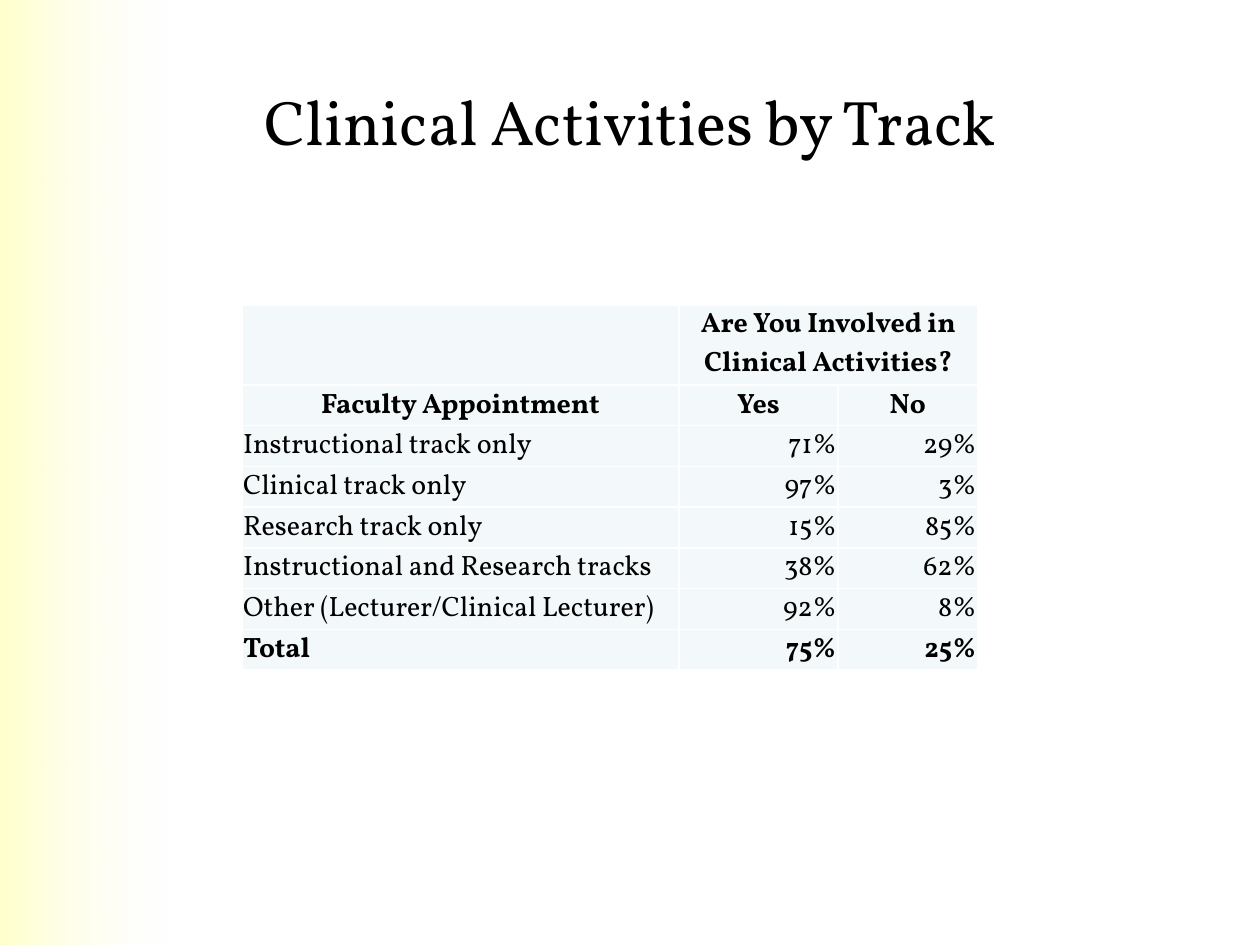
from lxml import etree
from pptx import Presentation
from pptx.dml.color import RGBColor
from pptx.enum.shapes import MSO_SHAPE
from pptx.enum.text import MSO_ANCHOR, PP_ALIGN
from pptx.oxml.ns import qn
from pptx.util import Pt

LEFT, CENTER, RIGHT = PP_ALIGN.LEFT, PP_ALIGN.CENTER, PP_ALIGN.RIGHT
TOP, MIDDLE, BOTTOM = MSO_ANCHOR.TOP, MSO_ANCHOR.MIDDLE, MSO_ANCHOR.BOTTOM
RECTANGLE = MSO_SHAPE.RECTANGLE

# Content
TITLE = "Clinical Activities by Track"
ROWS = [
    ("", "Are You Involved in Clinical Activities?", ""),
    ("Faculty Appointment", "Yes", "No"),
    ("Instructional track only", "71%", "29%"),
    ("Clinical track only", "97%", "3%"),
    ("Research track only", "15%", "85%"),
    ("Instructional and Research tracks", "38%", "62%"),
    ("Other (Lecturer/Clinical Lecturer)", "92%", "8%"),
    ("Total", "75%", "25%"),
]
HEADER_ROWS = 2
TOTAL_ROW = len(ROWS) - 1

# Layout and style, in points
FONT = "Vollkorn"
BLACK, WHITE, CELL_FILL = "000000", "FFFFFF", "F3F9FA"
BAND_START, BAND_END = "FFFFCC", "FFFFF4"
TABLE_LEFT, TABLE_TOP = 138.24, 174.24
COLUMN_WIDTHS = [249.84, 90.72, 79.92]
ROW_HEIGHTS = [45.72] + [23.28] * (len(ROWS) - 1)


def color(hex_value):
    return RGBColor.from_string(hex_value)


def style_paragraph(paragraph, size, alignment, bold=False):
    paragraph.alignment = alignment
    font = paragraph.font
    font.name, font.size, font.bold = FONT, Pt(size), bold
    font.color.rgb = color(BLACK)


def add_borders(cell, hex_value, width):
    properties = cell._tc.get_or_add_tcPr()
    for side in ("a:lnL", "a:lnR", "a:lnT", "a:lnB"):
        line = etree.SubElement(properties, qn(side), w=str(Pt(width)))
        fill = etree.SubElement(line, qn("a:solidFill"))
        etree.SubElement(fill, qn("a:srgbClr"), val=hex_value)


def add_side_band(slide):
    band = slide.shapes.add_shape(RECTANGLE, 0, 0, Pt(96), Pt(540))
    band.shadow.inherit = False
    band.line.fill.background()
    band.fill.gradient()
    band.fill.gradient_angle = 0
    first, last = band.fill.gradient_stops
    first.position, last.position = 0, 1
    first.color.rgb, last.color.rgb = color(BAND_START), color(BAND_END)
    # The last stop is fully transparent
    end_color = band.element.findall(".//" + qn("a:srgbClr"))[-1]
    etree.SubElement(end_color, qn("a:alpha"), val="0")
    slide.shapes.title.element.addprevious(band.element)


def add_title(slide):
    title = slide.shapes.title
    title.left, title.top, title.width, title.height = Pt(36), Pt(24), Pt(648), Pt(90)
    title.text = TITLE
    title.text_frame.vertical_anchor = MIDDLE
    style_paragraph(title.text_frame.paragraphs[0], 36, CENTER)


def add_track_table(slide):
    table = slide.shapes.add_table(
        len(ROWS), len(COLUMN_WIDTHS), Pt(TABLE_LEFT), Pt(TABLE_TOP),
        Pt(sum(COLUMN_WIDTHS)), Pt(sum(ROW_HEIGHTS))).table
    table.first_row = table.horz_banding = False
    for column, width in zip(table.columns, COLUMN_WIDTHS):
        column.width = Pt(width)
    for row, height in zip(table.rows, ROW_HEIGHTS):
        row.height = Pt(height)

    for row_index, values in enumerate(ROWS):
        is_header = row_index < HEADER_ROWS
        for column_index, value in enumerate(values):
            cell = table.cell(row_index, column_index)
            add_borders(cell, WHITE, 1)
            cell.fill.solid()
            cell.fill.fore_color.rgb = color(CELL_FILL)
            cell.margin_left = cell.margin_right = cell.margin_top = Pt(0.72)
            cell.margin_bottom = 0
            cell.vertical_anchor = BOTTOM if row_index == 1 else TOP
            cell.text = value
            alignment = CENTER if is_header else RIGHT if column_index else LEFT
            style_paragraph(cell.text_frame.paragraphs[0], 16, alignment,
                            is_header or row_index == TOTAL_ROW)
    table.cell(0, 1).merge(table.cell(0, 2))


def main():
    presentation = Presentation()
    presentation.slide_width, presentation.slide_height = Pt(720), Pt(540)
    slide = presentation.slides.add_slide(presentation.slide_layouts[5])
    slide.background.fill.solid()
    slide.background.fill.fore_color.rgb = color(WHITE)
    add_side_band(slide)
    add_title(slide)
    add_track_table(slide)
    presentation.save("out.pptx")


if __name__ == "__main__":
    main()
